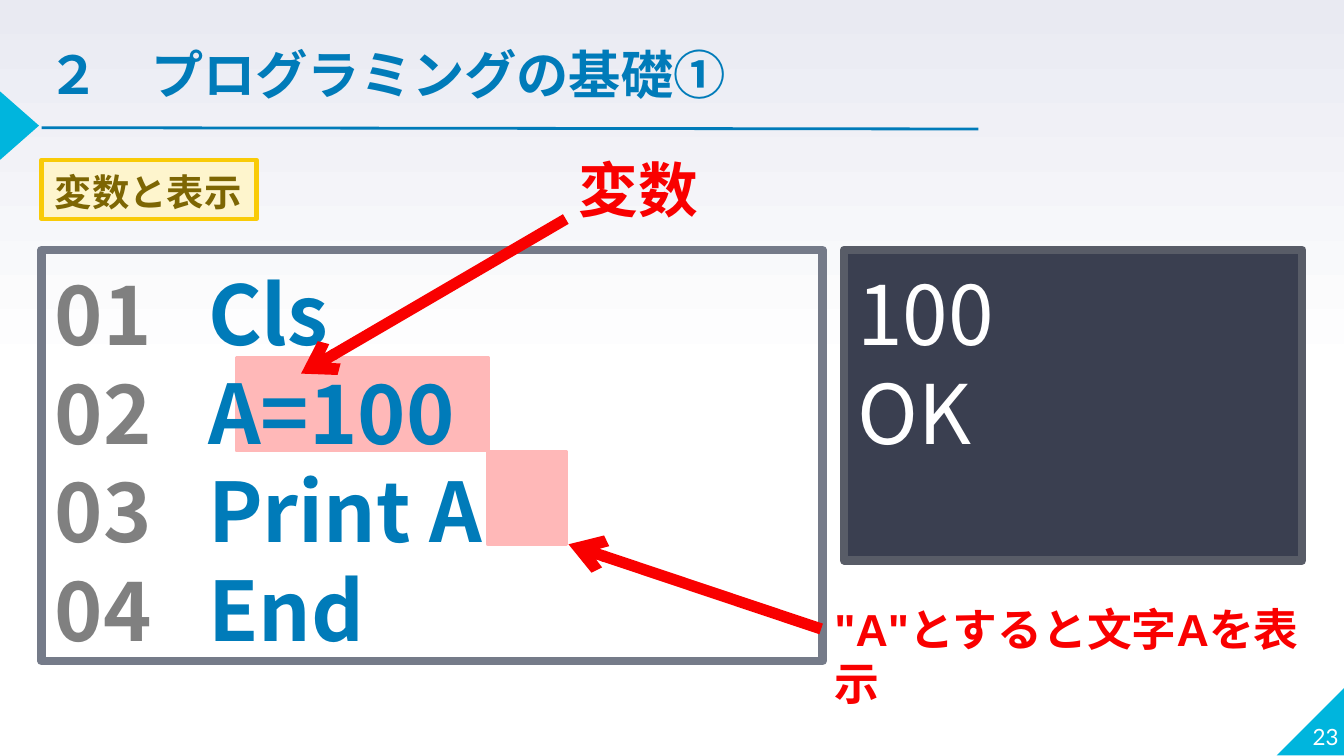
"""Build a programming lesson slide about variables and printing."""
from lxml import etree
from pptx import Presentation
from pptx.dml.color import RGBColor
from pptx.enum import shapes, text
from pptx.oxml.ns import qn
from pptx.util import Emu, Pt

PX = 9144
SANS = "Noto Sans CJK JP"
WHITE = RGBColor(0xFF, 0xFF, 0xFF)
LAVENDER = RGBColor(0xE9, 0xEA, 0xF2)
CYAN = RGBColor(0x00, 0xB5, 0xDD)
BLUE = RGBColor(0x00, 0x7B, 0xB9)
GRAY = RGBColor(0x80, 0x80, 0x80)
PINK = RGBColor(0xFF, 0xB8, 0xB8)
RED = RGBColor(0xF9, 0x00, 0x00)
CREAM = RGBColor(0xFE, 0xF5, 0xCD)
GOLD = RGBColor(0xF9, 0xCB, 0x07)
BROWN = RGBColor(0x7D, 0x66, 0x03)
SLATE = RGBColor(0x75, 0x7B, 0x89)
NAVY = RGBColor(0x3A, 0x3F, 0x50)
STEEL = RGBColor(0x58, 0x5C, 0x67)


def px(n):
    return Emu(round(n * PX))


class Deck:
    """Holds the style and the current slide."""

    def __init__(self, width, height):
        self.prs = Presentation()
        self.prs.slide_width, self.prs.slide_height = px(width), px(height)
        self.slide = self.prs.slides.add_slide(self.prs.slide_layouts[5])
        self.shapes = self.slide.shapes

    def background(self, low, high):
        fill = self.slide.background.fill
        fill.gradient()
        fill.gradient_angle = 90
        for stop, position, color in zip(fill.gradient_stops, (0.5, 1), (low, high)):
            stop.position = position
            stop.color.rgb = color

    def fill_text(self, sp, lines, size, font=SANS, bold=True, wrap=True, tab=None):
        tf = sp.text_frame
        tf.auto_size = text.MSO_AUTO_SIZE.NONE
        tf.word_wrap = wrap
        tf.vertical_anchor = text.MSO_ANCHOR.TOP
        tf.margin_left = tf.margin_right = px(10)
        tf.margin_top = tf.margin_bottom = px(5)
        if font == SANS:
            tf.margin_top = px(5 + size * 0.1)
        for i, runs in enumerate(lines):
            p = tf.add_paragraph() if i else tf.paragraphs[0]
            p.alignment = text.PP_ALIGN.LEFT
            if font == SANS:
                p.line_spacing = Pt(round(size * 1.2))
            if tab:
                tabs = etree.SubElement(p._p.get_or_add_pPr(), qn("a:tabLst"))
                etree.SubElement(tabs, qn("a:tab"), pos=str(px(tab)), algn="l")
            for words, color in runs:
                r = p.add_run()
                r.text = words
                r.font.size, r.font.bold, r.font.name = Pt(size), bold, font
                r.font.color.rgb = color
                latin = r._r.get_or_add_rPr().find(qn("a:latin"))
                latin.addnext(latin.makeelement(qn("a:ea"), {"typeface": font}))

    def title(self, box, words, size, color):
        sp = self.shapes.title
        sp.left, sp.top, sp.width, sp.height = map(px, box)
        self.fill_text(sp, [[(words, color)]], size)

    def shape(self, box, fill=None, line=None, weight=1,
              kind=shapes.MSO_SHAPE.RECTANGLE):
        sp = self.shapes.add_shape(kind, *map(px, box))
        sp.shadow.inherit = False
        if fill is None:
            sp.fill.background()
        else:
            sp.fill.solid()
            sp.fill.fore_color.rgb = fill
        if line is None:
            sp.line.fill.background()
        else:
            sp.line.color.rgb = line
            sp.line.width = Pt(weight)
        return sp

    def label(self, box, words, size, color, font="Arial", bold=True, wrap=True):
        sp = self.shapes.add_textbox(*map(px, box))
        self.fill_text(sp, [[(words, color)]], size, font, bold, wrap)
        return sp

    def page_number(self, box, words):
        tf = self.label(box, words, 12, WHITE, "Lato", False).text_frame
        tf.margin_left = tf.margin_top = tf.margin_right = tf.margin_bottom = 0
        tf.vertical_anchor = text.MSO_ANCHOR.BOTTOM
        tf.paragraphs[0].alignment = text.PP_ALIGN.RIGHT

    def line(self, start, end, color, weight, arrow=False):
        cxn = self.shapes.add_connector(
            shapes.MSO_CONNECTOR.STRAIGHT, *map(px, start + end))
        cxn.line.color.rgb = color
        cxn.line.width = Pt(weight)
        if arrow:
            ln = cxn._element.spPr.find(qn("a:ln"))
            etree.SubElement(ln, qn("a:tailEnd"), type="arrow")
        etree.SubElement(cxn._element.spPr, qn("a:effectLst"))
        return cxn


def main():
    deck = Deck(1000, 562.5)
    deck.background(WHITE, LAVENDER)

    corner = deck.shape((950, 511, 51, 51), CYAN,
                        kind=shapes.MSO_SHAPE.RIGHT_TRIANGLE)
    corner._element.spPr.find(qn("a:xfrm")).set("flipH", "1")
    marker = deck.shape((-11, 79, 51, 29), CYAN,
                        kind=shapes.MSO_SHAPE.ISOSCELES_TRIANGLE)
    marker.rotation = 90
    deck.page_number((946, 507, 50, 51), "23")
    deck.title((25, 23, 641, 57), "２　プログラミングの基礎①", 28, BLUE)
    deck.line((31, 95), (728, 96), BLUE, 1.5)

    for highlight in ((363, 336, 58, 69), (176, 266, 187, 69)):
        deck.shape(highlight, PINK, PINK, 2)
    code = deck.shape((31, 186, 581, 306), line=SLATE, weight=4.5)
    commands = ("Cls", "A=100", "Print A", "End")
    deck.fill_text(code, [[(f"{n:02}", GRAY), (f"\t{command}", BLUE)]
                          for n, command in enumerate(commands, 1)], 44, tab=114)

    topic = deck.shape((31, 119, 160, 44), CREAM, GOLD, 2.25)
    deck.fill_text(topic, [[("変数と表示", BROWN)]], 20, wrap=False)
    screen = deck.shape((628, 186, 341, 231), NAVY, STEEL, 4.5)
    deck.fill_text(screen, [[(words, WHITE)] for words in ("100", "OK")], 44, bold=False)

    deck.line((421, 163), (224, 278), RED, 6, arrow=True)
    deck.label((421, 109, 110, 64), "変数", 32, RED, wrap=False)
    note = deck.label((611, 443, 375, 50), "\"A\"とすると文字Aを表示", 24, RED)
    deck.line((611, 468), (423, 405), RED, 6, arrow=True).begin_connect(note, 1)

    deck.prs.save("out.pptx")


if __name__ == "__main__":
    main()
